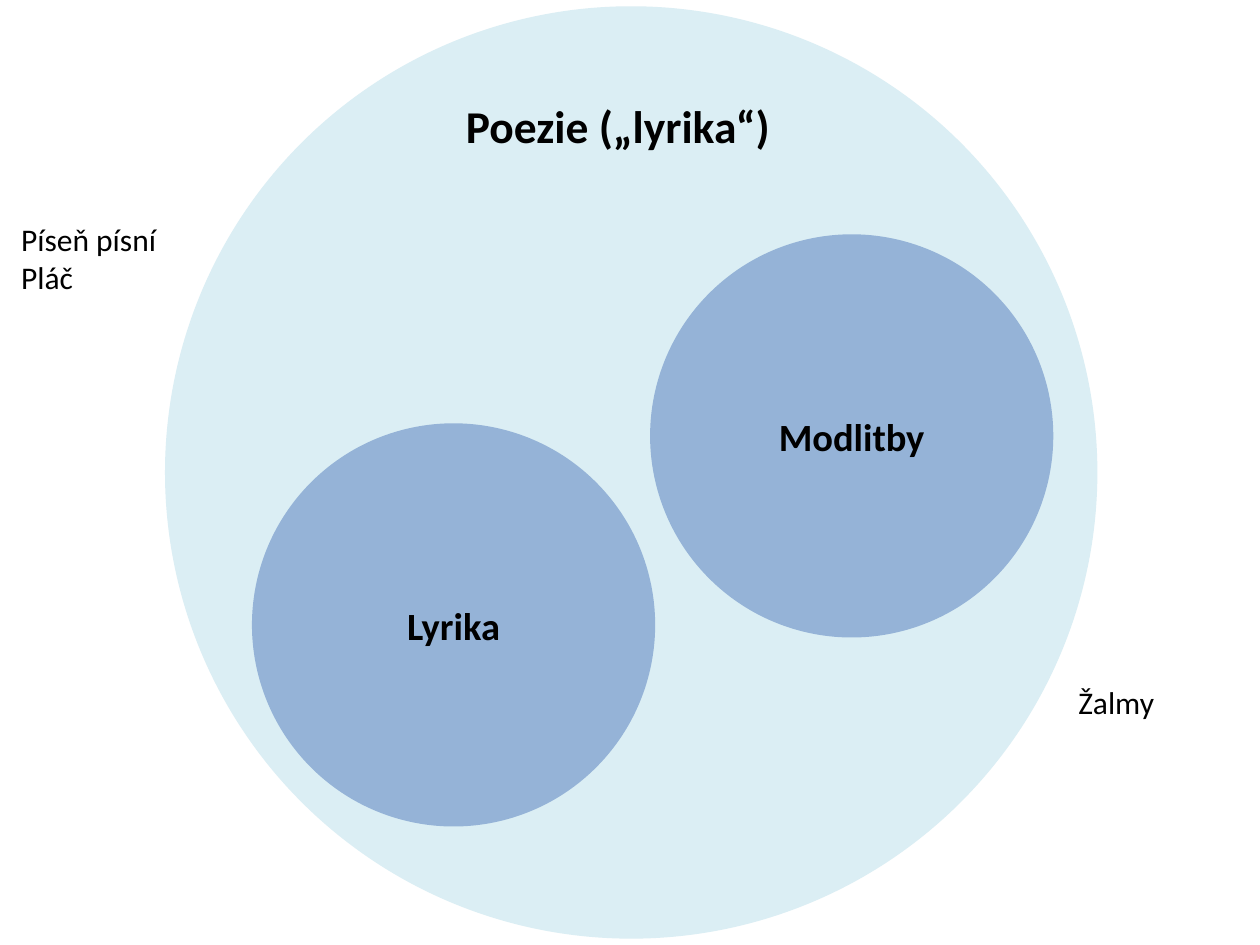
import pptx
import pptx.dml.color
import pptx.enum.shapes
import pptx.enum.text
import pptx.util

Inches = pptx.util.Inches
ALIGN = pptx.enum.text.PP_ALIGN
ANCHOR = pptx.enum.text.MSO_ANCHOR

FONT = "Calibri"
BLACK, PALE, BLUE = "000000", "DBEEF4", "95B3D7"

# left, top, diameter, fill, label
CIRCLES = [
    (1.31, 0.05, 7.4, PALE, None),
    (2, 3.36, 3.2, BLUE, "Lyrika"),
    (5.16, 1.86, 3.2, BLUE, "Modlitby"),
]
# left, top, width, height, lines, size, bold
CAPTIONS = [
    (3.6, 0.73, 2.64, 0.54, ["Poezie („lyrika“)"], 26, True),
    (0.07, 1.7, 1.34, 0.71, ["Píseň písní", "Pláč"], 18, False),
    (8.46, 5.37, 0.81, 0.4, ["Žalmy"], 18, False),
]


def rgb(value):
    return pptx.dml.color.RGBColor.from_string(value)


def write(frame, lines, size, bold, align):
    for number, line in enumerate(lines):
        paragraph = frame.add_paragraph() if number else frame.paragraphs[0]
        paragraph.alignment = align
        run = paragraph.add_run()
        run.text = line
        run.font.name = FONT
        run.font.size = pptx.util.Pt(size)
        run.font.bold = bold
        run.font.color.rgb = rgb(BLACK)


def add_circle(slide, left, top, diameter, fill, label):
    circle = slide.shapes.add_shape(
        pptx.enum.shapes.MSO_SHAPE.OVAL,
        Inches(left), Inches(top), Inches(diameter), Inches(diameter))
    circle.shadow.inherit = False
    circle.fill.solid()
    circle.fill.fore_color.rgb = rgb(fill)
    circle.line.fill.background()
    if label:
        circle.text_frame.vertical_anchor = ANCHOR.MIDDLE
        write(circle.text_frame, [label], 22, True, ALIGN.CENTER)


def add_caption(slide, left, top, width, height, lines, size, bold):
    caption = slide.shapes.add_textbox(
        Inches(left), Inches(top), Inches(width), Inches(height))
    frame = caption.text_frame
    frame.word_wrap = False
    frame.auto_size = pptx.enum.text.MSO_AUTO_SIZE.SHAPE_TO_FIT_TEXT
    write(frame, lines, size, bold, ALIGN.LEFT)


def main():
    deck = pptx.Presentation()
    deck.slide_width, deck.slide_height = Inches(10), Inches(7.5)
    slide = deck.slides.add_slide(deck.slide_layouts[6])
    for circle in CIRCLES:
        add_circle(slide, *circle)
    for caption in CAPTIONS:
        add_caption(slide, *caption)
    deck.save("out.pptx")


if __name__ == "__main__":
    main()
